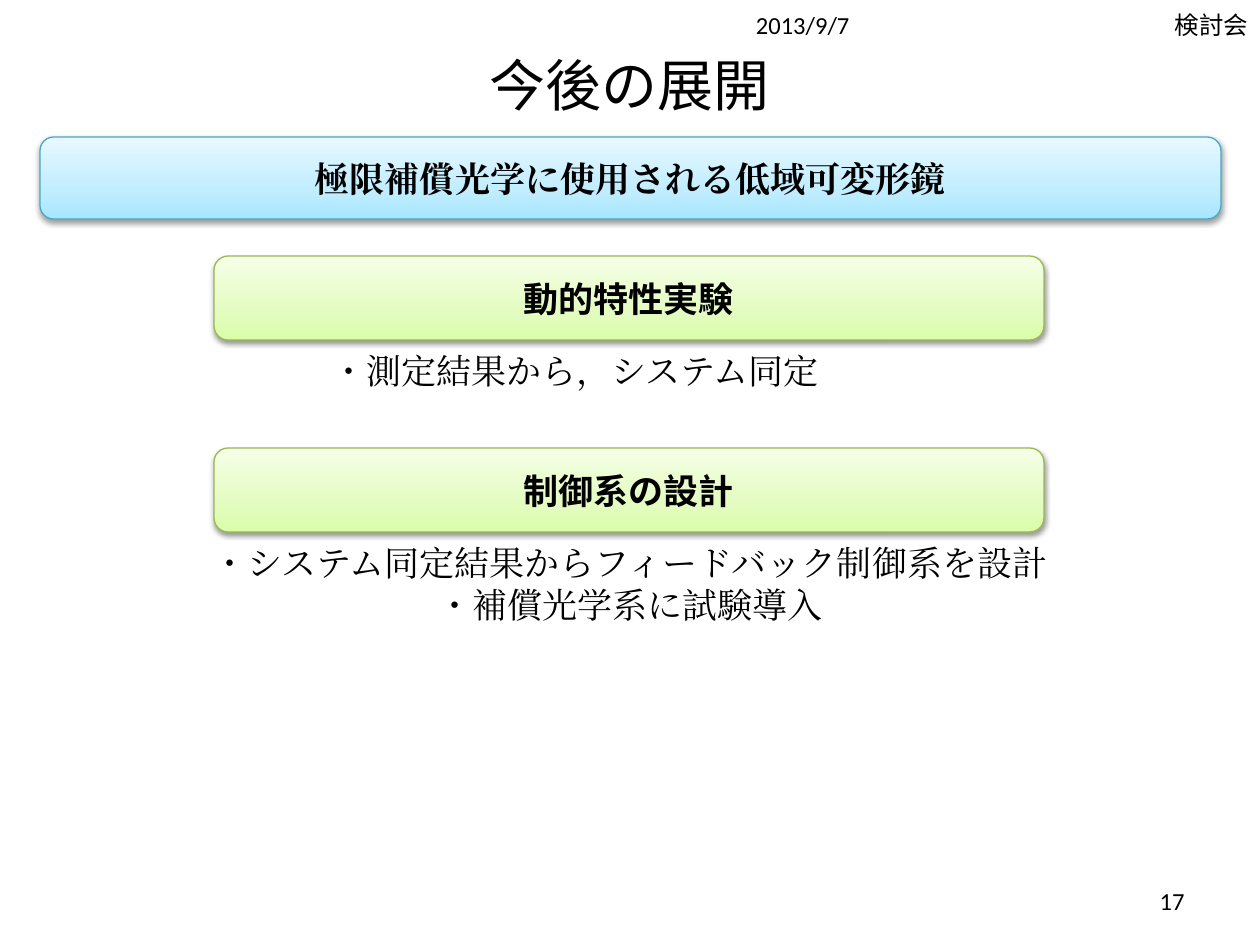
from lxml import etree
from pptx import Presentation, util as u
from pptx.dml.color import RGBColor
from pptx.enum import shapes, text
from pptx.oxml import parse_xml
from pptx.oxml.ns import nsdecls, qn

PX = 914400 // 126
BLACK = RGBColor(0x00, 0x00, 0x00)
BLUE_LINE = RGBColor(0x46, 0xAA, 0xC5)
GREEN_LINE = RGBColor(0x98, 0xB9, 0x55)
# Gradient stops from bottom to top, at 0, 35 and 100 percent
BLUE = [RGBColor(0xA7, 0xE6, 0xFF), RGBColor(0xC1, 0xED, 0xFF), RGBColor(0xE7, 0xF8, 0xFF)]
GREEN = [RGBColor(0xDA, 0xFD, 0xA7), RGBColor(0xE4, 0xFC, 0xC2), RGBColor(0xF5, 0xFF, 0xE7)]
STOPS = (0, 35, 100)
GOTHIC, SANS, SERIF = "Noto Sans CJK JP", "Calibri", "Times New Roman"

# Content: left, top, width, height in px
TITLE = ("今後の展開", (63, 38, 1134, 93))
MARGINS = [
    ("2013/9/7", (568, 0, 294, 50)),
    ("検討会", (862, 0, 399, 50)),
    ("17", (903, 876, 294, 50)),
]
THEME = ("極限補償光学に使用される低域可変形鏡", (40, 137, 1181, 82))
STEP_LEFT, STEP_WIDTH, STEP_HEIGHT = 214, 830, 84
STEPS = [
    ("動的特性実験", 256, ["・測定結果から，システム同定"], (214, 343, 722, 55)),
    ("制御系の設計", 448,
     ["・システム同定結果からフィードバック制御系を設計", "・補償光学系に試験導入"],
     (158, 535, 944, 97)),
]


def emu(box):
    return [n * PX for n in box]


def write(shape, lines, font, size, align, bold=False, anchor=text.MSO_ANCHOR.MIDDLE):
    frame = shape.text_frame
    frame.word_wrap = True
    frame.vertical_anchor = anchor
    frame.text = "\n".join(lines)
    for paragraph in frame.paragraphs:
        paragraph.alignment = align
        paragraph.font.name = font
        paragraph.font.size = u.Pt(size)
        paragraph.font.bold = bold
        paragraph.font.color.rgb = BLACK
        # East Asian characters use the same font
        latin = paragraph.font._element.find(qn("a:latin"))
        east_asian = etree.Element(qn("a:ea"), typeface=font)
        latin.addnext(east_asian)


def add_text(slide, box, *style, **options):
    write(slide.shapes.add_textbox(*emu(box)), *style, **options)


def add_banner(slide, label, box, colors, line, font):
    banner = slide.shapes.add_shape(shapes.MSO_SHAPE.ROUNDED_RECTANGLE, *emu(box))
    banner.fill.gradient()
    banner.fill.gradient_angle = 90
    banner.line.color.rgb = line
    banner.line.width = u.Pt(0.75)
    stops = banner._element.spPr.find(".//" + qn("a:gsLst"))
    stops[:] = [
        parse_xml(f'<a:gs {nsdecls("a")} pos="{pos * 1000}"><a:srgbClr val="{color}"/></a:gs>')
        for pos, color in zip(STOPS, colors)
    ]
    # Soft shadow straight below
    banner._element.spPr.append(parse_xml(
        f'<a:effectLst {nsdecls("a")}>'
        f'<a:outerShdw blurRad="{u.Pt(3.1)}" dist="{u.Pt(1.6)}" dir="5400000" rotWithShape="0">'
        '<a:srgbClr val="000000"><a:alpha val="38000"/></a:srgbClr>'
        '</a:outerShdw></a:effectLst>'))
    write(banner, [label], font, 20, text.PP_ALIGN.CENTER, bold=True)


def main():
    deck = Presentation()
    deck.slide_width, deck.slide_height = u.Inches(10), u.Inches(7.5)
    slide = deck.slides.add_slide(deck.slide_layouts[6])

    # Title, date, meeting and page number
    title, title_box = TITLE
    add_text(slide, title_box, [title], GOTHIC, 32, text.PP_ALIGN.CENTER)
    for label, box in MARGINS:
        add_text(slide, box, [label], SANS, 14, text.PP_ALIGN.RIGHT)

    # Theme, then each step with its notes
    add_banner(slide, *THEME, BLUE, BLUE_LINE, SERIF)
    for label, top, notes, notes_box in STEPS:
        step_box = (STEP_LEFT, top, STEP_WIDTH, STEP_HEIGHT)
        add_banner(slide, label, step_box, GREEN, GREEN_LINE, SANS)
        add_text(slide, notes_box, notes, SERIF, 20, text.PP_ALIGN.CENTER,
                 anchor=text.MSO_ANCHOR.TOP)

    deck.save("out.pptx")


if __name__ == "__main__":
    main()
